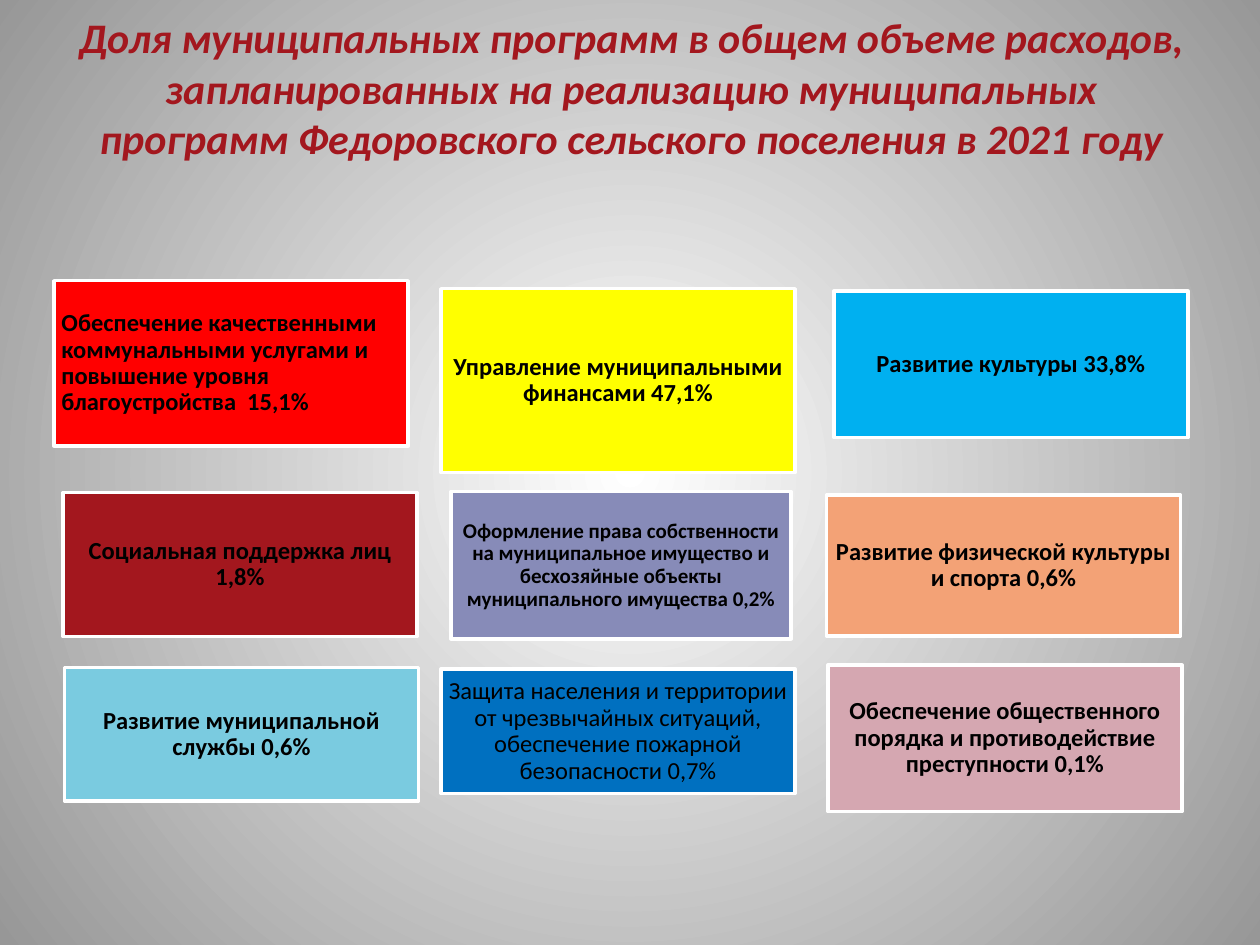
from dataclasses import dataclass

from pptx import Presentation
from pptx import util as u
from pptx.dml.color import RGBColor
from pptx.enum import shapes, text
from pptx.oxml import parse_xml
from pptx.oxml.ns import nsdecls, qn

FONT = "Calibri"
COLORS = {
    "white": "FFFFFF",
    "gray": "979797",
    "black": "000000",
    "red": "FF0000",
    "yellow": "FFFF00",
    "sky": "00B0F0",
    "crimson": "A3171E",
    "lavender": "878BB8",
    "peach": "F3A276",
    "aqua": "7ACBE0",
    "blue": "0070C0",
    "rose": "D5A7B1",
}
TITLE = (
    "Доля муниципальных программ в общем объеме расходов, запланированных на "
    "реализацию муниципальных программ Федоровского сельского поселения в 2021 году"
)


@dataclass
class Program:
    """A municipal programme box; lengths are in centimetres."""

    label: str
    color: str
    left: float
    top: float
    height: float
    width: float = 7.14
    inset: float = 0.15
    size: int = 14
    bold: bool = True
    align: text.PP_ALIGN = text.PP_ALIGN.CENTER


PROGRAMS = [
    Program("Обеспечение качественными коммунальными услугами и повышение уровня "
            "благоустройства  15,1%", "red", 1.09, 5.66, 3.33,
            align=text.PP_ALIGN.LEFT),
    Program("Управление муниципальными финансами 47,1%", "yellow", 8.89, 5.82, 3.71),
    Program("Развитие культуры 33,8%", "sky", 16.81, 5.87, 2.95),
    Program("Социальная поддержка лиц 1,8%", "crimson", 1.27, 9.93, 2.9),
    Program("Оформление права собственности на муниципальное имущество и бесхозяйные "
            "объекты муниципального имущества 0,2%", "lavender", 9.09, 9.91, 2.97,
            width=6.86, inset=0.13, size=12),
    Program("Развитие физической культуры и спорта 0,6%", "peach", 16.66, 9.98, 2.84),
    Program("Развитие муниципальной службы 0,6%", "aqua", 1.3, 13.46, 2.69),
    Program("Защита населения и территории от чрезвычайных ситуаций, обеспечение "
            "пожарной безопасности 0,7%", "blue", 8.89, 13.49, 2.51, bold=False),
    Program("Обеспечение общественного порядка и противодействие преступности 0,1%",
            "rose", 16.69, 13.41, 2.95),
]


def rgb(name: str) -> RGBColor:
    return RGBColor.from_string(COLORS[name])


def add_run(paragraph, content: str, size: int, color: str, bold: bool,
            italic: bool = False) -> None:
    run = paragraph.add_run()
    run.text = content
    font = run.font
    font.name, font.size = FONT, u.Pt(size)
    font.bold, font.italic = bold, italic
    font.color.rgb = rgb(color)


def set_radial_background(slide, center: str, edge: str) -> None:
    fill = slide.background.fill
    fill.gradient()
    for stop, position, color in zip(fill.gradient_stops, (0, 1), (center, edge)):
        stop.position = position
        stop.color.rgb = rgb(color)
    linear = slide.element.find(".//" + qn("a:lin"))
    linear.getparent().replace(linear, parse_xml(
        f'<a:path {nsdecls("a")} path="circle">'
        '<a:fillToRect l="50000" t="50000" r="50000" b="50000"/></a:path>'))


def fill_title(slide) -> None:
    title = slide.shapes.title
    title.left, title.top = u.Cm(1.3), u.Cm(0)
    title.width, title.height = u.Cm(22.86), u.Cm(3.53)
    frame = title.text_frame
    frame.vertical_anchor = text.MSO_ANCHOR.MIDDLE
    paragraph = frame.paragraphs[0]
    paragraph.alignment = text.PP_ALIGN.CENTER
    add_run(paragraph, TITLE, 24, "crimson", bold=True, italic=True)


def add_program(slide, program: Program) -> None:
    shape = slide.shapes.add_shape(
        shapes.MSO_SHAPE.RECTANGLE, u.Cm(program.left), u.Cm(program.top),
        u.Cm(program.width), u.Cm(program.height))
    shape.shadow.inherit = False
    shape.fill.solid()
    shape.fill.fore_color.rgb = rgb(program.color)
    shape.line.color.rgb = rgb("white")
    shape.line.width = u.Pt(2)

    frame = shape.text_frame
    frame.word_wrap = True
    frame.vertical_anchor = text.MSO_ANCHOR.MIDDLE
    frame.margin_left = frame.margin_right = u.Cm(program.inset)
    frame.margin_top = frame.margin_bottom = u.Cm(program.inset)
    paragraph = frame.paragraphs[0]
    paragraph.alignment = program.align
    paragraph.line_spacing = 0.9
    add_run(paragraph, program.label, program.size, "black", program.bold)


def main() -> None:
    presentation = Presentation()
    presentation.slide_width, presentation.slide_height = u.Cm(25.4), u.Cm(19.05)
    slide = presentation.slides.add_slide(presentation.slide_layouts[5])
    set_radial_background(slide, "white", "gray")
    fill_title(slide)
    for program in PROGRAMS:
        add_program(slide, program)
    presentation.save("out.pptx")


if __name__ == "__main__":
    main()
